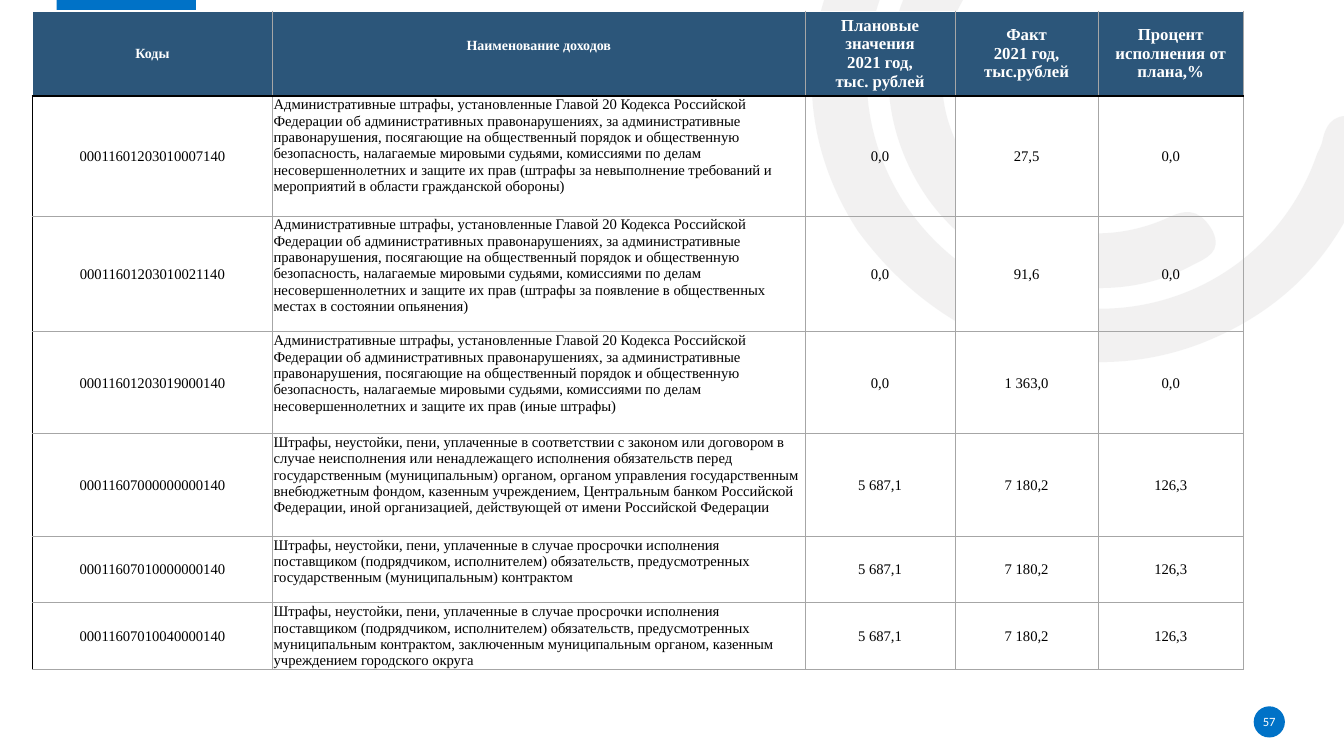
from lxml.etree import SubElement
from pptx import Presentation
from pptx.dml.color import RGBColor
from pptx.enum.shapes import MSO_SHAPE
from pptx.enum.text import MSO_ANCHOR, PP_ALIGN
from pptx.oxml.ns import qn
from pptx.util import Pt

HEADERS = [
    ("Коды", 10),
    ("Наименование доходов", 10),
    ("Плановые значения\n2021 год,\nтыс. рублей", 12),
    ("Факт\n2021 год, тыс.рублей", 12),
    ("Процент исполнения от плана,%", 12),
]
OFFENCES = (
    "Административные штрафы, установленные Главой 20 Кодекса Российской Федерации об "
    "административных правонарушениях, за административные правонарушения, посягающие на "
    "общественный порядок и общественную безопасность, налагаемые мировыми судьями, "
    "комиссиями по делам несовершеннолетних и защите их прав "
)
LATE_DELIVERY = (
    "Штрафы, неустойки, пени, уплаченные в случае просрочки исполнения поставщиком "
    "(подрядчиком, исполнителем) обязательств, предусмотренных "
)
INCOMES = [
    ("00011601203010007140",
     OFFENCES + "(штрафы за невыполнение требований и мероприятий в области гражданской обороны)",
     "0,0", "27,5", "0,0"),
    ("00011601203010021140",
     OFFENCES + "(штрафы за появление в общественных местах в состоянии опьянения)",
     "0,0", "91,6", "0,0"),
    ("00011601203019000140", OFFENCES + "(иные штрафы)", "0,0", "1 363,0", "0,0"),
    ("00011607000000000140",
     "Штрафы, неустойки, пени, уплаченные в соответствии с законом или договором в случае "
     "неисполнения или ненадлежащего исполнения обязательств перед государственным "
     "(муниципальным) органом, органом управления государственным внебюджетным фондом, "
     "казенным учреждением, Центральным банком Российской Федерации, иной организацией, "
     "действующей от имени Российской Федерации",
     "5 687,1", "7 180,2", "126,3"),
    ("00011607010000000140",
     LATE_DELIVERY + "государственным (муниципальным) контрактом",
     "5 687,1", "7 180,2", "126,3"),
    ("00011607010040000140",
     LATE_DELIVERY + "муниципальным контрактом, заключенным муниципальным органом, "
     "казенным учреждением городского округа",
     "5 687,1", "7 180,2", "126,3"),
]
PAGE_NUMBER = "57"
COLUMN_WIDTHS = [171.8, 380.2, 107.3, 102.2, 103.7]
ROW_HEIGHTS = [55.4, 85.7, 82.8, 72.7, 73.4, 47.5, 47.5]
NAME_COLUMN, FACT_COLUMN = 1, 3

# Each arc: a start point, then Bézier segments (two control points and an end point)
ARCS = [
    ((612.7, 164.9), [
        ((575.3, 107.3), (566.6, 36), (603.4, -36)),
        ((639.4, -109.4), (702.7, -146.2), (784.8, -149)),
        ((795.6, -149), (807.1, -151.2), (814.3, -140.4)),
        ((823.7, -126), (811.4, -110.9), (790.6, -110.9)),
        ((696.2, -110.9), (622.8, -42.5), (619.2, 49)),
        ((616.3, 130.3), (673.9, 202.3), (753.1, 217.4)),
        ((835.2, 233.3), (914.4, 187.9), (941, 109.4)),
        ((942.5, 106.6), (943.9, 103.7), (944.6, 100.8)),
        ((947.5, 85.7), (955.4, 79.9), (971.3, 84.2)),
        ((988.6, 89.3), (984.2, 101.5), (979.9, 112.3)),
        ((960.5, 176.4), (920.2, 221), (857.5, 245.5)),
        ((770.4, 278.6), (673.9, 248.4), (612.7, 164.9)),
    ]),
    ((663.8, 143.3), [
        ((620.6, 82.8), (625.7, 5), (676.8, -49)),
        ((684.7, -56.9), (692.6, -68.4), (705.6, -56.2)),
        ((716.4, -46.1), (717.8, -36), (704.9, -23)),
        ((666, 18.7), (662.4, 77.8), (694.8, 121)),
        ((725.8, 164.9), (783.4, 179.3), (835.9, 154.8)),
        ((851, 147.6), (859, 152.6), (866.2, 164.9)),
        ((873.4, 180), (861.8, 184.3), (851.8, 189.4)),
        ((789.1, 223.2), (707.8, 203), (663.8, 143.3)),
    ]),
]

BLUE, NAVY, GREY, ARC_GREY = "0072C7", "2C567A", "A6A6A6", "E7E6E6"
WHITE, BLACK = "FFFFFF", "000000"


def paint(fill, color):
    fill.solid()
    fill.fore_color.rgb = RGBColor.from_string(color)


def style_plain(shape, color):
    """Solid fill, no outline, no shadow."""
    paint(shape.fill, color)
    shape.line.fill.background()
    shape.shadow.inherit = False


def style_text(frame, font_name, size, color, bold=False, align=PP_ALIGN.CENTER):
    for paragraph in frame.paragraphs:
        paragraph.alignment = align
        font = paragraph.font
        font.name, font.size, font.bold = font_name, Pt(size), bold
        font.color.rgb = RGBColor.from_string(color)


def set_margins(area, size):
    area.margin_left = area.margin_top = area.margin_right = area.margin_bottom = Pt(size)


def draw_arc(slide, start, segments):
    """Outline through all points, then every three lines become one Bézier curve."""
    builder = slide.shapes.build_freeform(Pt(start[0]), Pt(start[1]))
    builder.add_line_segments(
        [(Pt(x), Pt(y)) for segment in segments for x, y in segment], close=True)
    arc = builder.convert_to_shape()
    lines = list(arc._element.iter(qn("a:lnTo")))
    for first in range(0, len(lines), 3):
        curve = SubElement(lines[first].getparent(), qn("a:cubicBezTo"))
        lines[first].addprevious(curve)
        for line in lines[first:first + 3]:
            curve.append(line[0])
            line.getparent().remove(line)
    style_plain(arc, ARC_GREY)
    color = arc.fill._xPr.find(qn("a:solidFill"))[0]
    SubElement(color, qn("a:alpha"), val="53000")


def set_borders(cell, row, column):
    left = (GREY, 0.5) if column else (BLACK if row else WHITE, 1)
    top = {0: (WHITE, 1), 1: (BLACK, 1)}.get(row, (GREY, 0.5))
    bottom = (GREY, 0.5) if row else (BLACK, 1)
    sides = {"L": left, "R": (GREY, 0.5), "T": top, "B": bottom}
    properties = cell._tc.get_or_add_tcPr()
    for side, (color, width) in sides.items():
        line = SubElement(properties, qn(f"a:ln{side}"), w=str(Pt(width)))
        SubElement(SubElement(line, qn("a:solidFill")), qn("a:srgbClr"), val=color)


def add_income_table(slide):
    table = slide.shapes.add_table(
        len(ROW_HEIGHTS), len(COLUMN_WIDTHS), Pt(23), Pt(8),
        Pt(sum(COLUMN_WIDTHS)), Pt(sum(ROW_HEIGHTS))).table
    table.first_row = table.horz_banding = False
    for column, width in zip(table.columns, COLUMN_WIDTHS):
        column.width = Pt(width)
    for row, height in zip(table.rows, ROW_HEIGHTS):
        row.height = Pt(height)

    for c, (text, size) in enumerate(HEADERS):
        cell = table.cell(0, c)
        cell.text = text
        cell.vertical_anchor = MSO_ANCHOR.MIDDLE
        set_borders(cell, 0, c)
        paint(cell.fill, NAVY)
        style_text(cell.text_frame, "Times New Roman", size, WHITE, bold=True)
    table.cell(0, NAME_COLUMN).margin_bottom = Pt(15)

    for r, income in enumerate(INCOMES, start=1):
        for c, text in enumerate(income):
            cell = table.cell(r, c)
            cell.text = text
            set_margins(cell, 0.7)
            cell.margin_bottom = 0
            is_name = c == NAME_COLUMN
            cell.vertical_anchor = MSO_ANCHOR.TOP if is_name else MSO_ANCHOR.MIDDLE
            set_borders(cell, r, c)
            if c == FACT_COLUMN:
                paint(cell.fill, WHITE)
            else:
                cell.fill.background()
            style_text(cell.text_frame, "Times New Roman", 10.5, BLACK,
                       align=PP_ALIGN.LEFT if is_name else PP_ALIGN.CENTER)


def main():
    deck = Presentation()
    deck.slide_width, deck.slide_height = Pt(960), Pt(540)
    slide = deck.slides.add_slide(deck.slide_layouts[6])

    for start, segments in ARCS:
        draw_arc(slide, start, segments)
    tab = slide.shapes.add_shape(MSO_SHAPE.RECTANGLE, Pt(40.5), Pt(-1.5), Pt(99.4), Pt(8.6))
    style_plain(tab, BLUE)

    badge = slide.shapes.add_shape(MSO_SHAPE.OVAL, Pt(895.5), Pt(504.5), Pt(22.3), Pt(22.3))
    style_plain(badge, BLUE)
    frame = badge.text_frame
    frame.text = PAGE_NUMBER
    frame.word_wrap = False
    frame.vertical_anchor = MSO_ANCHOR.MIDDLE
    set_margins(frame, 0)
    style_text(frame, "Calibri", 9, WHITE)

    add_income_table(slide)
    deck.save("out.pptx")


if __name__ == "__main__":
    main()
